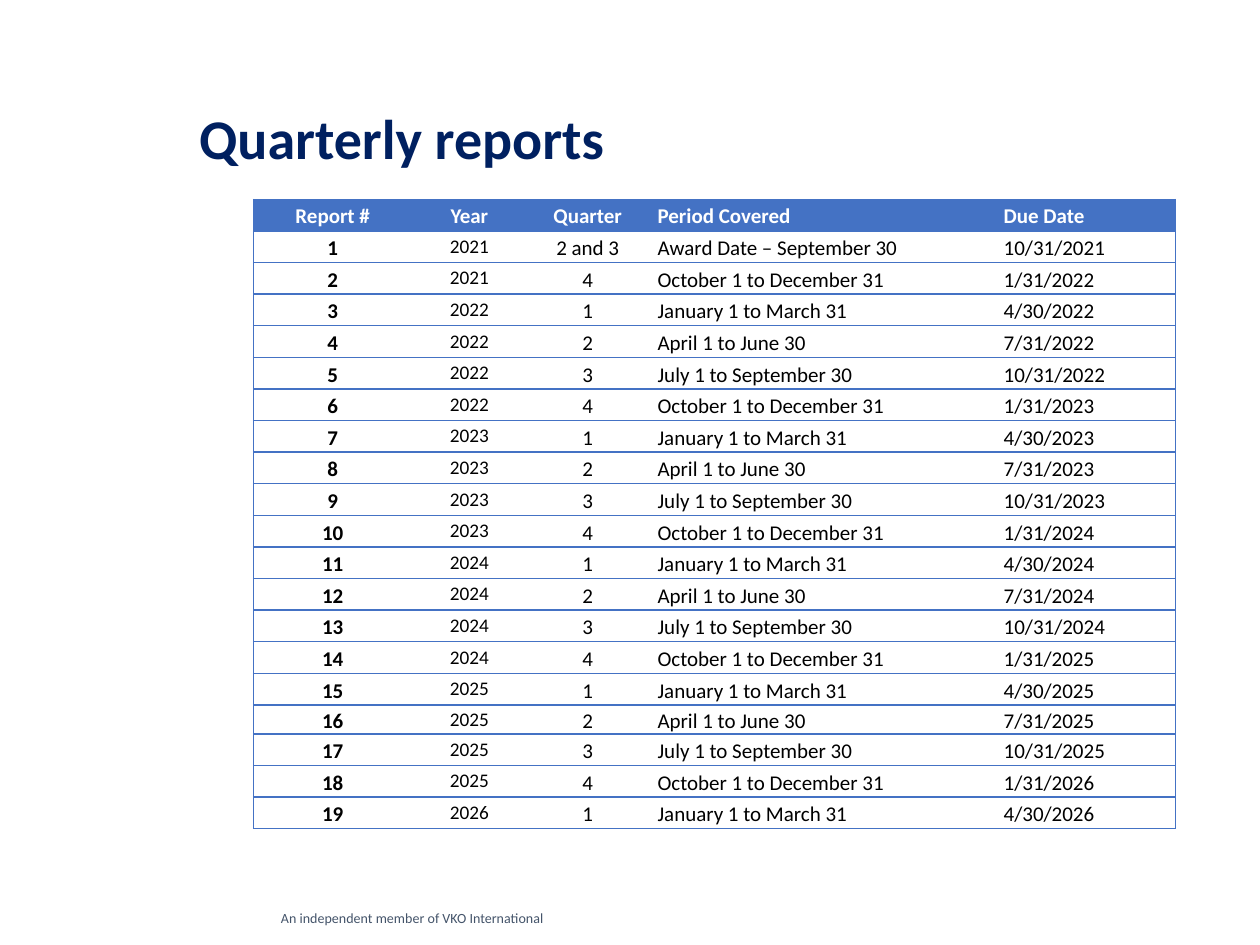
from dataclasses import dataclass

from lxml.etree import SubElement
from pptx import Presentation
from pptx.dml.color import RGBColor
from pptx.enum.text import MSO_ANCHOR, PP_ALIGN
from pptx.oxml.ns import qn
from pptx.util import Pt


@dataclass(frozen=True)
class Theme:
    font: str = "Calibri"
    navy: str = "002060"
    blue: str = "4472C4"
    slate: str = "44546A"
    white: str = "FFFFFF"
    black: str = "000000"
    title_size: float = 32
    body_size: float = 12
    year_size: float = 11
    footer_size: float = 8
    outer_line: float = 0.5
    inner_line: float = 1


THEME = Theme()
PLAIN_TABLE_STYLE = "{2D5ABB26-0587-4C30-8999-92F81FD0307C}"

HEADINGS = ("Report #", "Year", "Quarter", "Period Covered", "Due Date")
COLUMN_WIDTHS = (90.7, 65.5, 69.8, 197.8, 103.2)
CENTERED_COLUMNS = 3
YEAR_COLUMN = 1
ROW_HEIGHT = 18.07
SHORT_ROW, SHORT_ROW_HEIGHT = 16, 15.84

# Quarter number: period covered, due day in the month after it
QUARTERS = {
    1: ("January 1 to March 31", "4/30"),
    2: ("April 1 to June 30", "7/31"),
    3: ("July 1 to September 30", "10/31"),
    4: ("October 1 to December 31", "1/31"),
}


def report_rows():
    """Return the first, longer report and then one report per quarter."""
    rows = [("1", "2021", "2 and 3", "Award Date – September 30", "10/31/2021")]
    for number in range(2, 20):
        year, quarter = 2021 + (number + 1) // 4, (number + 1) % 4 + 1
        if number < 2 + 1:
            year, quarter = 2021, 4
        else:
            year, quarter = 2022 + (number - 3) // 4, (number - 3) % 4 + 1
        period, due_day = QUARTERS[quarter]
        due_year = year + (quarter == 4)
        rows.append((str(number), str(year), str(quarter), period, f"{due_day}/{due_year}"))
    return rows


def write_text(text_frame, text, size, color, bold=False, align=PP_ALIGN.LEFT,
               spacing=None, anchor=MSO_ANCHOR.TOP):
    text_frame.vertical_anchor = anchor
    paragraph = text_frame.paragraphs[0]
    paragraph.alignment = align
    if spacing:
        paragraph.line_spacing = spacing
    run = paragraph.add_run()
    run.text = text
    run.font.name = THEME.font
    run.font.size = Pt(size)
    run.font.bold = bold
    run.font.color.rgb = RGBColor.from_string(color)


def set_borders(cell, widths):
    """Draw the cell's lines; widths maps L, R, T, B to points, 0 for no line."""
    properties = cell._tc.get_or_add_tcPr()
    for position, side in enumerate("LRTB"):
        width = widths[side]
        line = SubElement(properties, qn(f"a:ln{side}"), w=str(int(Pt(width))))
        if width:
            fill = SubElement(line, qn("a:solidFill"))
            SubElement(fill, qn("a:srgbClr"), val=THEME.blue)
        else:
            SubElement(line, qn("a:noFill"))
        properties.insert(position, line)


def add_title(slide, text, left, top, width, height):
    title = slide.shapes.title
    title.left, title.top, title.width, title.height = map(Pt, (left, top, width, height))
    write_text(title.text_frame, text, THEME.title_size, THEME.navy, bold=True,
               spacing=0.9, anchor=MSO_ANCHOR.MIDDLE)


def add_report_table(slide, rows, left, top):
    heights = [ROW_HEIGHT] * len(rows)
    heights[SHORT_ROW] = SHORT_ROW_HEIGHT
    frame = slide.shapes.add_table(len(rows), len(HEADINGS), Pt(left), Pt(top),
                                   Pt(sum(COLUMN_WIDTHS)), Pt(sum(heights)))
    table = frame.table
    table.horz_banding = False
    table._tbl.tblPr.find(qn("a:tableStyleId")).text = PLAIN_TABLE_STYLE
    for column, width in zip(table.columns, COLUMN_WIDTHS):
        column.width = Pt(width)

    last_row, last_column = len(rows) - 1, len(HEADINGS) - 1
    for row_index, values in enumerate(rows):
        table.rows[row_index].height = Pt(heights[row_index])
        is_header = row_index == 0
        for column_index, value in enumerate(values):
            cell = table.cell(row_index, column_index)
            cell.margin_left = cell.margin_right = Pt(5.04)
            cell.margin_top = cell.margin_bottom = 0
            is_year = column_index == YEAR_COLUMN and not is_header
            write_text(
                cell.text_frame, value,
                THEME.year_size if is_year else THEME.body_size,
                THEME.white if is_header else THEME.black,
                bold=is_header or column_index == 0,
                align=PP_ALIGN.CENTER if column_index < CENTERED_COLUMNS else PP_ALIGN.LEFT,
                spacing=None if is_year else 1.15)
            cell.vertical_anchor = MSO_ANCHOR.TOP if is_header else MSO_ANCHOR.MIDDLE
            if is_header:
                cell.fill.solid()
                cell.fill.fore_color.rgb = RGBColor.from_string(THEME.blue)
            else:
                cell.fill.background()
            set_borders(cell, {
                "L": THEME.outer_line if column_index == 0 else 0,
                "R": THEME.outer_line if column_index == last_column else 0,
                "T": THEME.outer_line if row_index <= 1 else THEME.inner_line,
                "B": THEME.outer_line if row_index in (0, last_row) else THEME.inner_line,
            })


def add_footer(slide, text, left, top, width, height):
    footer = slide.shapes.add_textbox(*map(Pt, (left, top, width, height)))
    text_frame = footer.text_frame
    text_frame.word_wrap = True
    text_frame.margin_left = Pt(106.56)
    text_frame.margin_top = text_frame.margin_right = text_frame.margin_bottom = 0
    write_text(text_frame, text, THEME.footer_size, THEME.slate)


def main():
    presentation = Presentation()
    presentation.slide_width, presentation.slide_height = Pt(720), Pt(540)
    slide = presentation.slides.add_slide(presentation.slide_layouts[5])

    add_footer(slide, "An independent member of VKO International", 54, 519.84, 313.2, 9.36)
    add_title(slide, "Quarterly reports", 106.56, 28.8, 592.56, 104.4)
    add_report_table(slide, [HEADINGS, *report_rows()], 144.8, 113.9)

    presentation.save("out.pptx")


if __name__ == "__main__":
    main()
